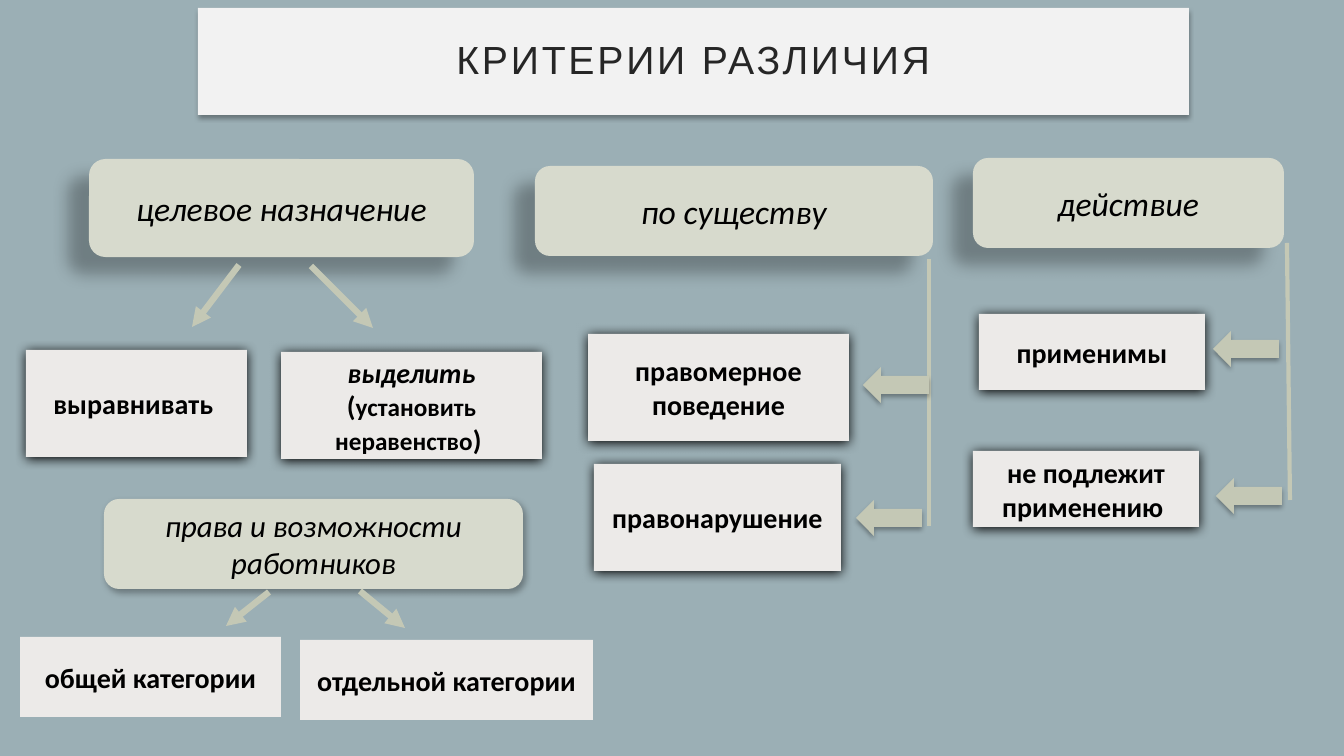
from lxml.etree import SubElement
from pptx import Presentation
from pptx.dml.color import RGBColor
from pptx.enum.shapes import MSO_CONNECTOR as Connector, MSO_SHAPE as Shape
from pptx.enum.text import MSO_ANCHOR as Anchor, PP_ALIGN as Align
from pptx.oxml.ns import qn
from pptx.util import Emu, Inches, Pt

EMU_PER_PX = 914400 / 100.8
BLACK, SAND, SAGE, PALE = "000000", "C4C8B5", "D7DACD", "ECEAE8"
SOFT = (32, 3.5, 2.2, 90)
GLOW = (100, 8.5, 1, 90)
DEEP = (28, 11.8, 19.7, 141)
NEAR = (30, 4.5, 2.6, 53)


def px(value):
    return Emu(round(value * EMU_PER_PX))


def color(code):
    return RGBColor.from_string(code)


def add_shadow(box, alpha, blur, distance, angle):
    effects = box._element.spPr.find(qn("a:effectLst"))
    shadow = SubElement(effects, qn("a:outerShdw"), blurRad=str(Pt(blur)),
                        dist=str(Pt(distance)), dir=str(angle * 60000),
                        algn="ctr", rotWithShape="0")
    shade = SubElement(shadow, qn("a:srgbClr"), val=BLACK)
    SubElement(shade, qn("a:alpha"), val=str(alpha * 1000))


def add_block(page, kind, place, fill, shadow=None):
    box = page.shapes.add_shape(kind, *map(px, place))
    box.fill.solid()
    box.fill.fore_color.rgb = color(fill)
    box.line.fill.background()
    box.shadow.inherit = False
    if shadow:
        add_shadow(box, *shadow)
    return box


def style_span(span, size, bold=False, italic=False, tint=BLACK, face="Calibri"):
    span.font.name = face
    span.font.size = Pt(size)
    span.font.bold = bold
    span.font.italic = italic
    span.font.color.rgb = color(tint)


def write(box, text, size, **style):
    frame = box.text_frame
    frame.word_wrap = True
    frame.vertical_anchor = Anchor.MIDDLE
    frame.text = text
    for para in frame.paragraphs:
        para.alignment = Align.CENTER
        for span in para.runs:
            style_span(span, size, **style)


def add_title(page, text):
    box = add_block(page, Shape.RECTANGLE, (198, 8, 991, 107), "F2F2F2", SOFT)
    write(box, text, 28, tint="262626", face="Arial")
    frame = box.text_frame
    frame.margin_left = frame.margin_right = Inches(0.3)
    frame.margin_top = frame.margin_bottom = Inches(0.2)
    para = frame.paragraphs[0]
    para.line_spacing = 0.9
    para.runs[0].font._element.set("spc", "200")


def add_criterion(page, text, place, size=24, shadow=DEEP):
    box = add_block(page, Shape.ROUNDED_RECTANGLE, place, SAGE, shadow)
    write(box, text, size, italic=True)


def add_card(page, text, place, shadow=GLOW):
    box = add_block(page, Shape.RECTANGLE, place, PALE, shadow)
    write(box, text, 20, bold=True)
    return box


def add_distinction_card(page):
    box = add_card(page, "выделить", (281, 352, 261, 107))
    para = box.text_frame.paragraphs[0]
    para.runs[0].font.italic = True
    for text, size in ((" (", 20), ("установить неравенство", 18), (") ", 20)):
        span = para.add_run()
        span.text = text
        style_span(span, size, bold=True)


def add_line(page, ends, width, arrow=False):
    line = page.shapes.add_connector(Connector.STRAIGHT, *map(px, ends))
    line.line.color.rgb = color(SAND)
    line.line.width = Pt(width)
    if arrow:
        SubElement(line.line._get_or_add_ln(), qn("a:tailEnd"), type="triangle")
    SubElement(line._element.spPr, qn("a:effectLst"))


def main():
    deck = Presentation()
    deck.slide_width, deck.slide_height = px(1344), px(756)
    page = deck.slides.add_slide(deck.slide_layouts[6])
    page.background.fill.solid()
    page.background.fill.fore_color.rgb = color("9BAFB5")

    add_title(page, "КРИТЕРИИ РАЗЛИЧИЯ")

    add_criterion(page, "целевое назначение", (89, 159, 385, 98))
    add_criterion(page, "по существу", (535, 166, 398, 90))
    add_criterion(page, "действие", (973, 158, 311, 90))
    add_criterion(page, "права и возможности\nработников", (104, 499, 419, 90), 22, NEAR)

    add_card(page, "выравнивать ", (26, 350, 221, 107))
    add_distinction_card(page)
    add_card(page, "правомерное\nповедение", (588, 334, 261, 107))
    add_card(page, "правонарушение", (594, 464, 247, 107))
    add_card(page, "применимы", (979, 314, 226, 76))
    add_card(page, "не подлежит применению ", (973, 451, 226, 76))
    add_card(page, "общей категории", (20, 637, 261, 80), None)
    add_card(page, "отдельной категории", (300, 640, 293, 80), None)

    for ends in ((239, 265, 192, 327), (311, 266, 373, 328),
                 (269, 592, 226, 626), (360, 591, 405, 628)):
        add_line(page, ends, 4.5, arrow=True)
    for ends in ((929, 259, 929, 526), (1287, 243, 1290, 500)):
        add_line(page, ends, 3)
    for left, top in ((863, 367), (856, 500), (1213, 331), (1216, 478)):
        add_block(page, Shape.LEFT_ARROW, (left, top, 66, 36), SAND, SOFT)

    deck.save("out.pptx")


if __name__ == "__main__":
    main()
